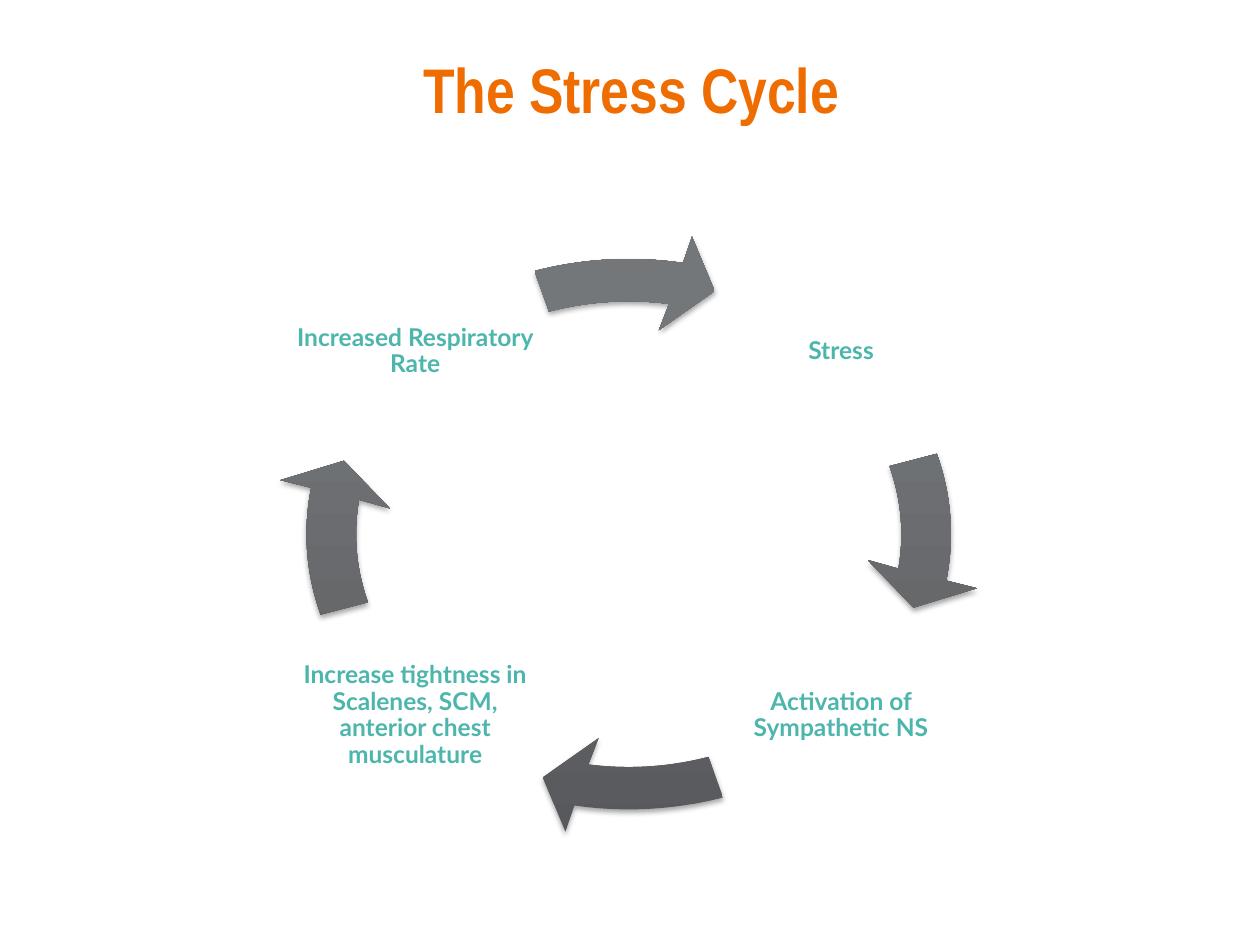
import math

import pptx
import pptx.dml.color
import pptx.enum.text
import pptx.oxml
import pptx.oxml.ns
import pptx.util

ORANGE = pptx.dml.color.RGBColor(0xEF, 0x6C, 0x00)
TEAL = pptx.dml.color.RGBColor(0x4D, 0xB6, 0xAC)
BLACK = pptx.dml.color.RGBColor(0x00, 0x00, 0x00)
# Gradient of the ring, from bottom (0 %) to top (100 %)
RING_STOPS = (
    (0, pptx.dml.color.RGBColor(0x58, 0x59, 0x5C)),
    (80, pptx.dml.color.RGBColor(0x74, 0x77, 0x79)),
    (100, pptx.dml.color.RGBColor(0x74, 0x76, 0x7A)),
)

SLIDE_WIDTH, SLIDE_HEIGHT = 10, 7.5

# Frame shared by the four arrows
RING_LEFT, RING_TOP, RING_WIDTH, RING_HEIGHT = map(
    pptx.util.Inches, (2.18, 1.84, 5.62, 4.8))
OUTER, INNER = 0.91, 0.77  # band edges, as shares of the ring's radius

# Two by two grid of labels
LABEL_WIDTH, LABEL_HEIGHT = 1.99, 1.7
COLUMNS = (2.3, 5.68)
ROWS = (1.94, 4.83)
LABELS = (
    ("Stress", 1, 0),
    ("Activation of Sympathetic NS", 1, 1),
    ("Increase tightness in Scalenes, SCM, anterior chest musculature", 0, 1),
    ("Increased Respiratory Rate", 0, 0),
)


def add_text(page, text, bounds, margins, font_name, size, color, spacing=1.0):
    """Add a bold, centred text box; bounds and margins are in inches."""
    box = page.shapes.add_textbox(*map(pptx.util.Inches, bounds))
    frame = box.text_frame
    frame.word_wrap = True
    frame.vertical_anchor = pptx.enum.text.MSO_ANCHOR.MIDDLE
    side, end = map(pptx.util.Inches, margins)
    frame.margin_left = frame.margin_right = side
    frame.margin_top = frame.margin_bottom = end
    frame.text = text
    para = frame.paragraphs[0]
    para.alignment = pptx.enum.text.PP_ALIGN.CENTER
    para.line_spacing = spacing
    font = para.runs[0].font
    font.name, font.size, font.bold = font_name, pptx.util.Pt(size), True
    font.color.rgb = color


def ring_point(radius, degrees):
    """Point on the ring: share of its radius, angle clockwise from the right."""
    angle = math.radians(degrees)
    x = RING_LEFT + RING_WIDTH / 2 * (1 + radius * math.cos(angle))
    y = RING_TOP + RING_HEIGHT / 2 * (1 + radius * math.sin(angle))
    return round(x), round(y)


def arc(radius, start, end):
    """Start, two Bezier control points and end of an arc."""
    reach = 4 / 3 * math.tan(math.radians(end - start) / 4)
    turn = math.degrees(math.atan(reach))
    control = radius * math.hypot(1, reach)
    return [(radius, start), (control, start + turn), (control, end - turn), (radius, end)]


def bend(line):
    """Merge a line and the two after it into one Bezier curve."""
    curve = pptx.oxml.parse_xml(f"<a:cubicBezTo {pptx.oxml.ns.nsdecls('a')}/>")
    second = line.getnext()
    third = second.getnext()
    line.addprevious(curve)
    for part in (line, second, third):
        curve.append(part[0])
        part.getparent().remove(part)


def fit_to_ring(shape):
    """Widen the frame to the whole ring, keeping the outline in place."""
    shift_x, shift_y = shape.left - RING_LEFT, shape.top - RING_TOP
    outline = shape._element.find(".//" + pptx.oxml.ns.qn("a:path"))
    for point in outline.iter(pptx.oxml.ns.qn("a:pt")):
        point.set("x", str(int(point.get("x")) + shift_x))
        point.set("y", str(int(point.get("y")) + shift_y))
    outline.set("w", str(RING_WIDTH))
    outline.set("h", str(RING_HEIGHT))
    shape.left, shape.top = RING_LEFT, RING_TOP
    shape.width, shape.height = RING_WIDTH, RING_HEIGHT
    return outline


def style_arrow(shape):
    """Give the arrow the ring's gradient and a soft shadow below."""
    namespace = pptx.oxml.ns.nsdecls("a")
    stops = "".join(
        f'<a:gs pos="{share * 1000}"><a:srgbClr val="{color}"/></a:gs>'
        for share, color in RING_STOPS
    )
    gradient = pptx.oxml.parse_xml(
        f'<a:gradFill {namespace} rotWithShape="1"><a:gsLst>{stops}</a:gsLst>'
        '<a:lin ang="16200000" scaled="0"/></a:gradFill>'
    )
    shadow = pptx.oxml.parse_xml(
        f'<a:effectLst {namespace}><a:outerShdw blurRad="{pptx.util.Pt(3.1)}" '
        f'dist="{pptx.util.Pt(1.8)}" dir="5400000" rotWithShape="0">'
        f'<a:srgbClr val="{BLACK}"><a:alpha val="35000"/></a:srgbClr>'
        "</a:outerShdw></a:effectLst>"
    )
    shape.line.fill.background()
    outline = shape.line._get_or_add_ln()
    outline.addprevious(gradient)
    outline.addnext(shadow)


def add_ring_arrow(page, middle):
    """Add a curved clockwise arrow centred on an angle of the ring."""
    profile = [
        *arc(OUTER, -17, 9.7),
        (1.0, 10.3), (0.84, 16.8), (0.68, 7.2),  # arrowhead
        *arc(INNER, 8.5, -17),
    ]
    points = [ring_point(radius, middle + angle) for radius, angle in profile]
    builder = page.shapes.build_freeform(*points[0], scale=1.0)
    builder.add_line_segments(points[1:], close=True)
    shape = builder.convert_to_shape()
    lines = fit_to_ring(shape).findall(pptx.oxml.ns.qn("a:lnTo"))
    bend(lines[0])  # outer edge
    bend(lines[7])  # inner edge
    style_arrow(shape)


def main():
    deck = pptx.Presentation()
    deck.slide_width = pptx.util.Inches(SLIDE_WIDTH)
    deck.slide_height = pptx.util.Inches(SLIDE_HEIGHT)
    page = deck.slides.add_slide(deck.slide_layouts[6])

    # Title
    add_text(page, "The Stress Cycle", (0.9, 0.4, 8.22, 0.6), (0.1, 0.05),
             "Arial Narrow", 36, ORANGE)

    # Each label is followed by the arrow leading to the next one
    for index, (text, column, row) in enumerate(LABELS):
        bounds = (COLUMNS[column], ROWS[row], LABEL_WIDTH, LABEL_HEIGHT)
        add_text(page, text, bounds, (0.02, 0.02), "Lato", 14, TEAL, spacing=0.9)
        add_ring_arrow(page, 90 * index)

    deck.save("out.pptx")


if __name__ == "__main__":
    main()
